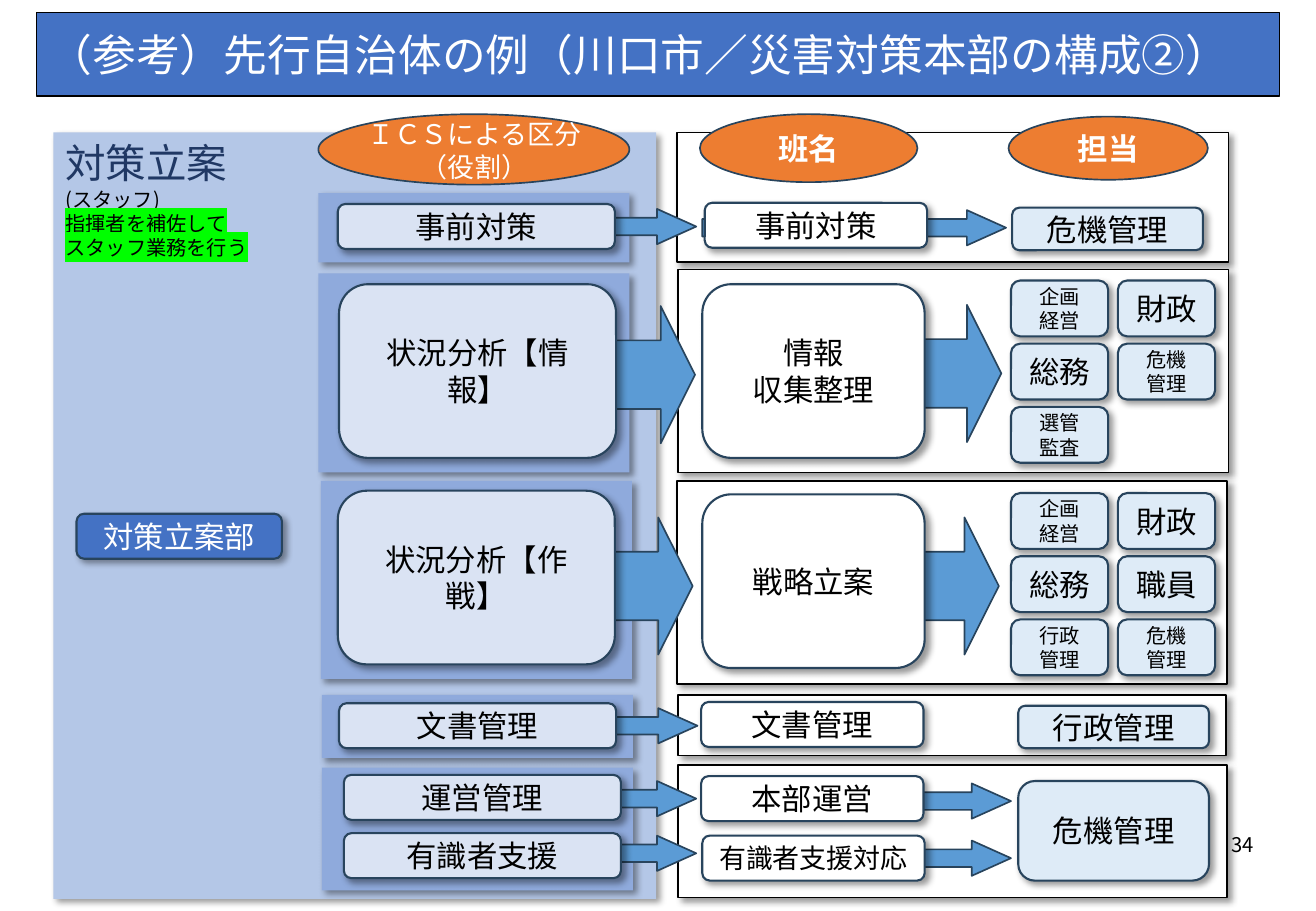
import pptx
import pptx.util
import pptx.dml.color
import pptx.enum.shapes
import pptx.enum.text
import pptx.oxml
import pptx.oxml.ns
from lxml import etree

Inches, Pt = pptx.util.Inches, pptx.util.Pt
RGBColor = pptx.dml.color.RGBColor
SHAPE = pptx.enum.shapes.MSO_SHAPE
ALIGN = pptx.enum.text.PP_ALIGN
ANCHOR = pptx.enum.text.MSO_ANCHOR

WHITE = RGBColor(0xFF, 0xFF, 0xFF)
BLACK = RGBColor(0x00, 0x00, 0x00)
BLUE = RGBColor(0x44, 0x72, 0xC4)
NAVY = RGBColor(0x20, 0x38, 0x64)
EDGE = RGBColor(0x28, 0x44, 0x5D)
ORANGE = RGBColor(0xED, 0x7D, 0x31)
ARROW = RGBColor(0x5B, 0x9B, 0xD5)
PANEL = RGBColor(0xB4, 0xC7, 0xE7)
BAND = RGBColor(0x8F, 0xAA, 0xDC)
ROLE = RGBColor(0xDA, 0xE3, 0xF3)
SECTION = RGBColor(0xDE, 0xEB, 0xF7)
GREEN = RGBColor(0x00, 0xFF, 0x00)


class Chart:
    """Draws the organisation chart's elements on one slide in a shared style."""

    font = "Noto Sans CJK JP"
    leading = 1.2

    def __init__(self, slide):
        self.slide = slide

    def paint(self, shape, fill, line=None, width=1):
        shape.fill.solid()
        shape.fill.fore_color.rgb = fill
        if line is None:
            shape.line.fill.background()
        else:
            shape.line.color.rgb = line
            shape.line.width = Pt(width)

    def style(self, paragraph, size, color, align, bold=False, tight=False):
        paragraph.alignment = align
        paragraph.font.size = Pt(size)
        paragraph.font.bold = bold
        paragraph.font.color.rgb = color
        paragraph.font.name = self.font
        east_asian = etree.SubElement(paragraph.font._element, pptx.oxml.ns.qn("a:ea"))
        east_asian.set("typeface", self.font)
        if tight:
            paragraph.line_spacing = Pt(size * self.leading)

    def set_text(self, shape, text, size=18, color=BLACK, align=ALIGN.CENTER,
                 anchor=ANCHOR.MIDDLE, bold=False, tight=False):
        frame = shape.text_frame
        frame.word_wrap = True
        frame.auto_size = pptx.enum.text.MSO_AUTO_SIZE.NONE
        frame.vertical_anchor = anchor
        frame.text = text
        for paragraph in frame.paragraphs:
            self.style(paragraph, size, color, align, bold, tight or "\n" in text)
        return frame

    def shape(self, kind, box, fill, line=None, width=1, shadow=False):
        shape = self.slide.shapes.add_shape(kind, *map(Inches, box))
        shape.shadow.inherit = False
        self.paint(shape, fill, line, width)
        if shadow:
            effects = shape._element.spPr.find(pptx.oxml.ns.qn("a:effectLst"))
            effects.append(pptx.oxml.parse_xml(
                f'<a:outerShdw {pptx.oxml.ns.nsdecls("a")} blurRad="{Pt(4)}" dist="{Pt(3)}" '
                'dir="2700000" algn="tl" rotWithShape="0"><a:srgbClr val="000000">'
                '<a:alpha val="40000"/></a:srgbClr></a:outerShdw>'))
        return shape

    def title(self, text, box):
        title = self.slide.shapes.title
        title.left, title.top, title.width, title.height = map(Inches, box)
        self.paint(title, BLUE, BLACK, 0.75)
        self.set_text(title, text, 25.9, WHITE, ALIGN.LEFT)

    def block(self, box, fill, line=None):
        return self.shape(SHAPE.RECTANGLE, box, fill, line, shadow=True)

    def card(self, text, box, fill, size=18, color=BLACK, tight=False):
        card = self.shape(SHAPE.ROUNDED_RECTANGLE, box, fill, EDGE, 1.25, True)
        self.set_text(card, text, size, color, tight=tight)

    def heading(self, box, text=""):
        oval = self.shape(SHAPE.OVAL, box, ORANGE, EDGE)
        if text:
            self.set_text(oval, text, 18, WHITE, bold=True)

    def arrow(self, box, head):
        arrow = self.shape(SHAPE.RIGHT_ARROW, box, ARROW, EDGE)
        arrow.adjustments[0], arrow.adjustments[1] = 0.5, head

    def label(self, text, box, **style):
        self.set_text(self.slide.shapes.add_textbox(*map(Inches, box)), text, **style)

    def staff_panel(self, box):
        panel = self.block(box, PANEL)
        frame = self.set_text(panel, "対策立案\n(スタッフ)\n指揮者を補佐して\nスタッフ業務を行う",
                              12, BLACK, ALIGN.LEFT, ANCHOR.TOP)
        name = frame.paragraphs[0]
        name.font.size, name.font.color.rgb = Pt(24), NAVY
        name.line_spacing = Pt(24 * self.leading)
        for duty in frame.paragraphs[2:]:
            properties = duty.runs[0].font._element
            highlight = etree.SubElement(properties, pptx.oxml.ns.qn("a:highlight"))
            etree.SubElement(highlight, pptx.oxml.ns.qn("a:srgbClr")).set("val", str(GREEN))


TEAM_FRAMES = [(5.57, 1.09, 4.54, 1.07), (5.58, 2.22, 4.53, 1.67), (5.57, 3.96, 4.53, 1.67),
               (5.58, 5.72, 4.51, 0.5), (5.58, 6.3, 4.52, 1.09)]
ROLE_BANDS = [(2.62, 1.59, 0.57), (2.62, 2.25, 1.64), (2.64, 3.96, 1.63),
              (2.65, 5.72, 0.52), (2.65, 6.32, 1.01)]
SMALL_ARROWS = [(3.23, 1.72), (5.78, 1.73), (3.24, 5.83), (3.23, 6.43),
                (5.82, 6.45), (3.23, 6.88), (5.82, 6.92)]
LARGE_ARROWS = [(3.45, 2.52, 2.27), (5.82, 2.51, 2.42), (3.43, 4.26, 2.27), (5.85, 4.26, 2.37)]
LOW, TALL = 0.37, 1.43
ROLES = [("事前対策", 2.78, 1.68, LOW), ("状況分析【情報】", 2.79, 2.34, TALL),
         ("状況分析【作戦】", 2.78, 4.04, TALL), ("文書管理", 2.79, 5.79, LOW),
         ("運営管理", 2.83, 6.38, LOW), ("有識者支援", 2.83, 6.86, LOW)]
TEAMS = [("事前対策", 5.8, 1.67, LOW, 18), ("情報\n収集整理", 5.78, 2.34, TALL, 18),
         ("戦略立案", 5.78, 4.07, TALL, 18), ("文書管理", 5.77, 5.78, LOW, 18),
         ("本部運営", 5.77, 6.39, LOW, 18), ("有識者支援対応", 5.78, 6.88, LOW, 16)]
WIDE_SECTIONS = [("危機管理", 8.33, 1.71, 0.35), ("行政管理", 8.38, 5.81, 0.35),
                 ("危機管理", 8.38, 6.43, 0.82)]
SECTION_GRIDS = [(2.31, ["企画\n経営", "財政", "総務", "危機\n管理", "選管\n監査"]),
                 (4.06, ["企画\n経営", "財政", "総務", "職員", "行政\n管理", "危機\n管理"])]


def main():
    deck = pptx.Presentation()
    deck.slide_width, deck.slide_height = Inches(10.83), Inches(7.5)
    chart = Chart(deck.slides.add_slide(deck.slide_layouts[5]))

    chart.title("（参考）先行自治体の例（川口市／災害対策本部の構成②）", (0.3, 0.1, 10.23, 0.69))
    for frame in TEAM_FRAMES:
        chart.block(frame, WHITE, BLACK)
    chart.staff_panel((0.44, 1.09, 4.96, 6.31))
    chart.card("対策立案部", (0.63, 4.23, 1.69, LOW), BLUE, color=WHITE)

    chart.heading((2.62, 0.94, 2.56, 0.58))
    chart.label("ＩＣＳによる区分\n（役割）", (2.78, 0.92, 2.25, 0.64),
                size=16, color=WHITE, anchor=ANCHOR.TOP)
    chart.heading((5.76, 0.94, 1.79, 0.56), "班名")
    chart.heading((8.3, 0.96, 1.64, 0.52), "担当")

    for left, top, height in ROLE_BANDS:
        chart.block((left, top, 2.56, height), BAND)
    for left, top in SMALL_ARROWS:
        chart.arrow((left, top, 2.5, 0.29), 1.11)
    for left, top, width in LARGE_ARROWS:
        chart.arrow((left, top, width, 1.13), 0.25)

    for role, left, top, height in ROLES:
        chart.card(role, (left, top, 2.28, height), ROLE, tight=height == TALL)
    for team, left, top, height, size in TEAMS:
        chart.card(team, (left, top, 1.83, height), WHITE, size)
    for section, left, top, height in WIDE_SECTIONS:
        chart.card(section, (left, top, 1.57, height), SECTION)
    for grid_top, sections in SECTION_GRIDS:
        for index, section in enumerate(sections):
            row, column = divmod(index, 2)
            box = (8.32 + 0.88 * column, grid_top + 0.52 * row, 0.8, 0.46)
            chart.card(section, box, SECTION, 12 if "\n" in section else 18)

    chart.label("34", (8.15, 6.75, 2.27, 0.4), size=12, align=ALIGN.RIGHT)
    deck.save("out.pptx")


if __name__ == "__main__":
    main()
